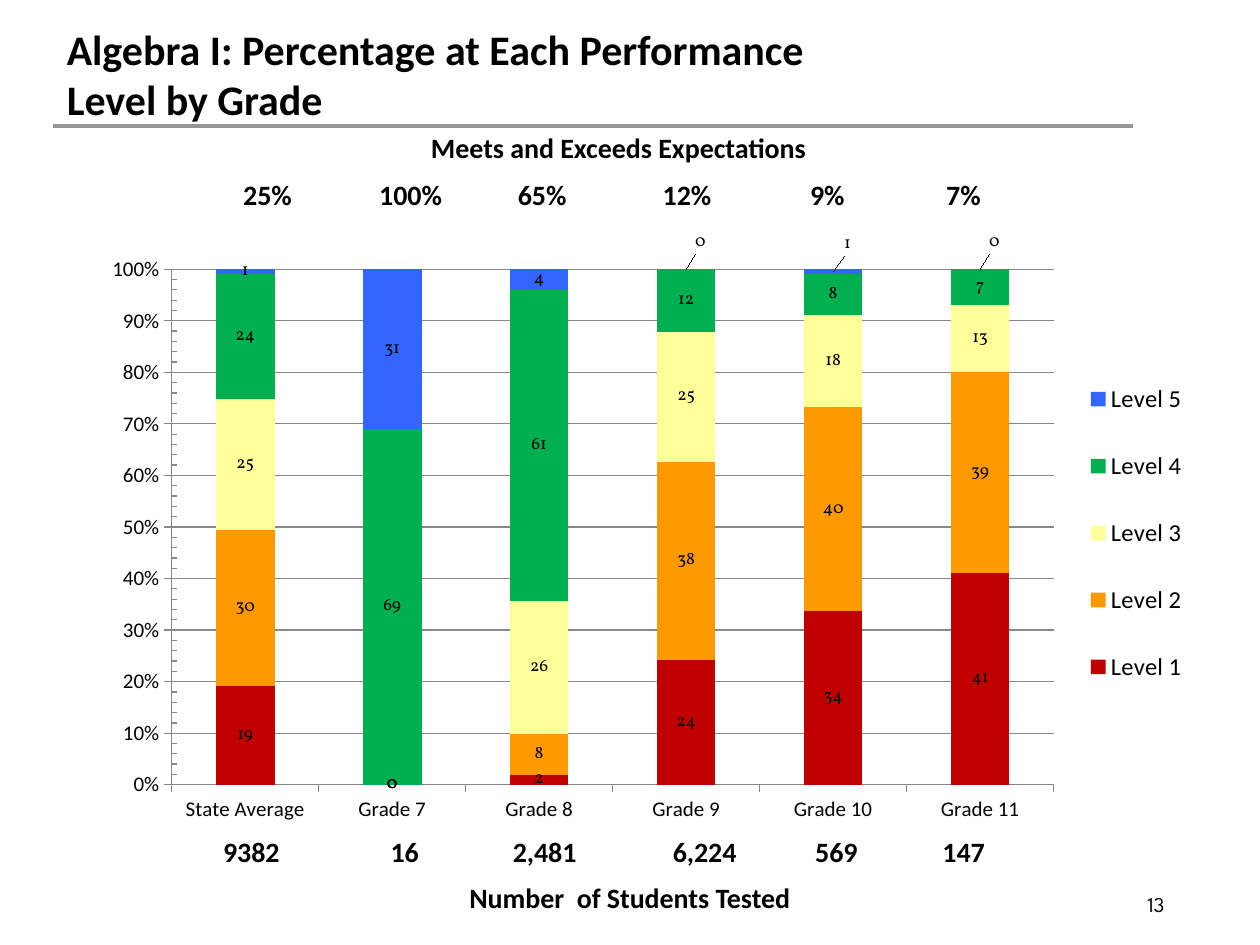
import dataclasses

import pptx
import pptx.chart.data
import pptx.dml.color
import pptx.enum.chart
import pptx.enum.shapes
import pptx.enum.text
import pptx.oxml
import pptx.oxml.ns
import pptx.util

Inches = pptx.util.Inches
Pt = pptx.util.Pt
Rgb = pptx.dml.color.RGBColor.from_string
Align = pptx.enum.text.PP_ALIGN
Tick = pptx.enum.chart.XL_TICK_MARK

NO_GRID_STYLE = "{2D5ABB26-0587-4C30-8999-92F81FD0307C}"


@dataclasses.dataclass(frozen=True)
class Theme:
    text: str = "000000"
    rule: str = "969696"
    grid: str = "878787"
    levels: tuple = ("C00000", "FF9900", "FFFF99", "00B050", "3366FF")
    body_font: str = "Calibri"
    label_font: str = "Vollkorn"
    number_font: str = "League Spartan"
    title_size: int = 24
    table_size: int = 16
    legend_size: int = 14
    small_size: int = 12
    label_size: int = 10


class SlideBuilder:
    def __init__(self, slide, theme):
        self.slide = slide
        self.theme = theme

    def style(self, font, size, name=None, bold=False):
        font.name = name or self.theme.body_font
        font.size = Pt(size)
        font.bold = bold
        font.color.rgb = Rgb(self.theme.text)

    def title(self, text, left, top, width, height):
        title = self.slide.shapes.title
        title.left, title.top, title.width, title.height = map(
            Inches, (left, top, width, height))
        frame = title.text_frame
        frame.auto_size = pptx.enum.text.MSO_AUTO_SIZE.NONE
        frame.vertical_anchor = pptx.enum.text.MSO_ANCHOR.MIDDLE
        frame.text = text
        paragraph = frame.paragraphs[0]
        paragraph.alignment = Align.LEFT
        properties = paragraph.font and paragraph._p.get_or_add_pPr()
        properties.set("marL", str(Inches(0.18)))
        properties.set("indent", "0")
        self.style(paragraph.font, self.theme.title_size, bold=True)

    def rule(self, left, right, y):
        rule = self.slide.shapes.add_connector(
            pptx.enum.shapes.MSO_CONNECTOR.STRAIGHT,
            Inches(left), Inches(y), Inches(right), Inches(y))
        rule.line.color.rgb = Rgb(self.theme.rule)
        rule.line.width = Pt(2)
        rule.element.spPr.append(pptx.oxml.parse_xml(
            f'<a:effectLst {pptx.oxml.ns.nsdecls("a")}/>'))

    def page_number(self, text, left, top, width, height):
        box = self.slide.shapes.add_textbox(*map(Inches, (left, top, width, height)))
        box.text_frame.word_wrap = True
        box.text_frame.text = text
        paragraph = box.text_frame.paragraphs[0]
        paragraph.alignment = Align.RIGHT
        self.style(paragraph.font, self.theme.small_size, self.theme.number_font)

    def table(self, left, top, columns, heights, values, caption, caption_row):
        """Borderless table: one row of values and one merged caption row."""
        frame = self.slide.shapes.add_table(
            2, len(columns), Inches(left), Inches(top),
            Inches(sum(columns)), Inches(sum(heights)))
        frame.element.xpath(".//a:tableStyleId")[0].text = NO_GRID_STYLE
        table = frame.table
        table.first_row = table.horz_banding = False
        for column, width in zip(table.columns, columns):
            column.width = Inches(width)
        for row, height in zip(table.rows, heights):
            row.height = Inches(height)

        table.cell(caption_row, 0).merge(table.cell(caption_row, len(columns) - 1))
        table.cell(caption_row, 0).text = caption
        for index, value in enumerate(values):
            table.cell(1 - caption_row, index).text = value
        for cell in table.iter_cells():
            cell.fill.background()
            self.style(cell.text_frame.paragraphs[0].font,
                       self.theme.table_size, bold=True)
        table.cell(caption_row, 0).text_frame.paragraphs[0].alignment = Align.CENTER

    def place(self, element, index, **fractions):
        """Give a chart part a manual layout in fractions of the chart."""
        for old in element.xpath("./c:layout"):
            element.remove(old)
        target = '<c:layoutTarget val="inner"/>' if index == 0 else ""
        modes = "".join(f'<c:{axis}Mode val="edge"/>' for axis in "xy") if "w" in fractions else ""
        values = "".join(f'<c:{key} val="{value}"/>' for key, value in fractions.items())
        element.insert(index, pptx.oxml.parse_xml(
            f'<c:layout {pptx.oxml.ns.nsdecls("c")}><c:manualLayout>'
            f"{target}{modes}{values}</c:manualLayout></c:layout>"))

    def stacked_chart(self, left, top, width, height, categories, levels, raised):
        """100% stacked columns; raised lists points of the top level labelled above."""
        data = pptx.chart.data.CategoryChartData(number_format="0")
        data.categories = categories
        for name, values in levels.items():
            data.add_series(name, values)
        chart = self.slide.shapes.add_chart(
            pptx.enum.chart.XL_CHART_TYPE.COLUMN_STACKED_100,
            *map(Inches, (left, top, width, height)), data).chart
        chart.has_title = False
        self.style(chart.font, self.theme.label_size, self.theme.label_font)

        plot = chart.plots[0]
        plot.gap_width, plot.overlap = 150, 100
        plot.vary_by_categories = False
        for series, color in zip(plot.series, self.theme.levels):
            series.format.fill.solid()
            series.format.fill.fore_color.rgb = Rgb(color)
            labels = series.data_labels
            labels.show_value = True
            labels.number_format, labels.number_format_is_linked = "0", False
            self.style(labels.font, self.theme.label_size, self.theme.label_font)
        for index in raised:
            self.style(plot.series[-1].points[index].data_label.font,
                       self.theme.label_size, self.theme.label_font)
        for label in chart.element.xpath(".//c:dLbl"):
            self.place(label, 1, x=0.013, y=-0.045)

        for axis in (chart.category_axis, chart.value_axis):
            axis.major_tick_mark = Tick.OUTSIDE
            axis.format.line.color.rgb = Rgb(self.theme.grid)
            self.style(axis.tick_labels.font, self.theme.small_size)
        percent = chart.value_axis
        percent.minimum_scale, percent.maximum_scale = 0, 1
        percent.major_unit = 0.1
        percent.minor_tick_mark = Tick.INSIDE
        percent.tick_labels.number_format = "0%"
        percent.tick_labels.number_format_is_linked = False
        percent.has_major_gridlines = True
        percent.major_gridlines.format.line.color.rgb = Rgb(self.theme.grid)

        chart.has_legend = True
        chart.legend.position = pptx.enum.chart.XL_LEGEND_POSITION.RIGHT
        chart.legend.include_in_layout = False
        self.style(chart.legend.font, self.theme.legend_size)
        self.place(chart.element.xpath(".//c:plotArea")[0], 0,
                   x=0.07, y=0.06, w=0.8, h=0.86)
        self.place(chart.element.xpath(".//c:legend")[0], 1,
                   x=0.89, y=0.19, w=0.11, h=0.62)


def main():
    presentation = pptx.Presentation()
    presentation.slide_width, presentation.slide_height = Inches(10), Inches(7.5)
    title_only = presentation.slide_layouts[5]
    builder = SlideBuilder(presentation.slides.add_slide(title_only), Theme())

    builder.rule(0.42, 8.99, 1)
    builder.page_number("13", 8.67, 7.03, 0.67, 0.3)
    builder.title("Algebra I: Percentage at Each Performance \vLevel by Grade",
                  0.25, 0.25, 9.42, 0.67)
    builder.table(1.83, 1, (1.08, 1.1, 1.15, 1.17, 1.08, 0.58), (0.36, 0.37),
                  ("25%", "100%", "65%", "12%", "9%", "7%"),
                  "Meets and Exceeds Expectations", caption_row=0)
    builder.table(1.67, 6.58, (1.33, 0.97, 1.27, 1.13, 1.01, 0.95), (0.37, 0.44),
                  ("9382", "16", "2,481", "6,224", "569", "147"),
                  "Number  of Students Tested", caption_row=1)
    grades = ["State Average"] + [f"Grade {grade}" for grade in range(7, 12)]
    levels = {
        "Level 1": (19, 0, 2, 24, 34, 41),
        "Level 2": (30, 0, 8, 38, 40, 39),
        "Level 3": (25, 0, 26, 25, 18, 13),
        "Level 4": (24, 69, 61, 12, 8, 7),
        "Level 5": (1, 31, 4, 0, 1, 0),
    }
    builder.stacked_chart(0.75, 1.83, 8.75, 4.78, grades, levels, raised=(3, 4, 5))
    presentation.save("out.pptx")


if __name__ == "__main__":
    main()
